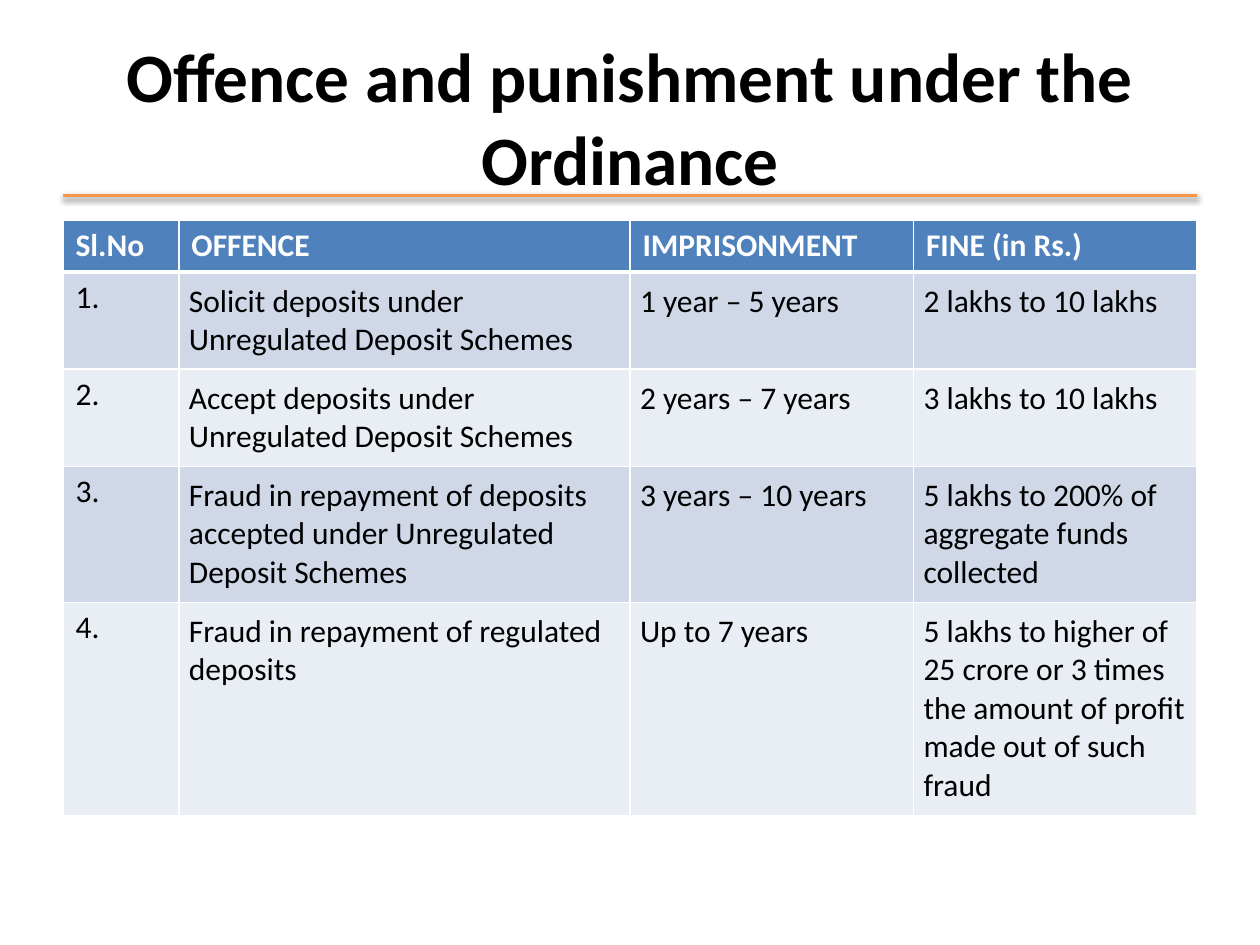
from lxml import etree
from pptx import Presentation
from pptx.dml.color import RGBColor
from pptx.enum import shapes, text
from pptx.oxml import parse_xml
from pptx.oxml.ns import nsdecls
from pptx.util import Inches, Pt

FONT = "Calibri"
LEFT, WIDTH = 0.5, 9
COLUMN_WIDTHS = [0.92, 3.58, 2.25, 2.25]
ROW_HEIGHTS = [0.41, 0.77, 0.77, 1.08, 1.69]
HEADER_FILL = "4F81BD"
BAND_FILLS = ["E9EDF4", "D0D8E8"]
HEADINGS = ["Sl.No", "OFFENCE", "IMPRISONMENT", "FINE (in Rs.)"]
OFFENCES = [
    ("Solicit deposits under Unregulated Deposit Schemes",
     "1 year – 5 years", "2 lakhs to 10 lakhs"),
    ("Accept deposits under Unregulated Deposit Schemes",
     "2 years – 7 years", "3 lakhs to 10 lakhs"),
    ("Fraud in repayment of deposits accepted under Unregulated Deposit Schemes",
     "3 years – 10 years", "5 lakhs to 200% of aggregate funds collected"),
    ("Fraud in repayment of regulated deposits", "Up to 7 years",
     "5 lakhs to higher of 25 crore or 3 times the amount of profit "
     "made out of such fraud"),
]


def color(value):
    """Turn a hex string into a colour."""
    return RGBColor.from_string(value)


def write_text(frame, content, size=18, fill="000000", bold=False, align=None):
    """Put one formatted paragraph into a text frame."""
    paragraph = frame.paragraphs[0]
    paragraph.alignment = align
    run = paragraph.add_run()
    run.text = content
    run.font.name = FONT
    run.font.size = Pt(size)
    run.font.bold = bold
    run.font.color.rgb = color(fill)


def add_title(slide, content):
    """Place and format the title placeholder."""
    title = slide.shapes.title
    title.left, title.top = Inches(LEFT), Inches(0.3)
    title.width, title.height = Inches(WIDTH), Inches(1.25)
    title.text_frame.word_wrap = True
    title.text_frame.vertical_anchor = text.MSO_ANCHOR.MIDDLE
    write_text(title.text_frame, content, size=39.6, bold=True,
               align=text.PP_ALIGN.CENTER)


def set_borders(cell, bottom=1, top=1):
    """Draw white borders, with widths in points, around a cell."""
    properties = cell._tc.get_or_add_tcPr()
    sides = {"lnL": 1, "lnR": 1, "lnT": top, "lnB": bottom}
    for index, (side, width) in enumerate(sides.items()):
        border = parse_xml(
            f'<a:{side} {nsdecls("a")} w="{Pt(width)}"><a:solidFill>'
            f'<a:srgbClr val="FFFFFF"/></a:solidFill></a:{side}>')
        properties.insert(index, border)


def fill_cell(cell, content, row, column):
    """Fill, border and write one table cell."""
    header = row == 0
    cell.fill.solid()
    cell.fill.fore_color.rgb = color(HEADER_FILL if header else BAND_FILLS[row % 2])
    set_borders(cell, bottom=3 if header else 1, top=3 if row == 1 else 1)
    if row and column:
        cell.margin_left = cell.margin_right = Inches(0.08)
        cell.margin_top = cell.margin_bottom = Inches(0.08)
    write_text(cell.text_frame, content, bold=header,
               fill="FFFFFF" if header else "000000")


def add_offence_table(slide):
    """Add the table of offences and punishments."""
    rows = [HEADINGS] + [(f"{number}.", *offence)
                         for number, offence in enumerate(OFFENCES, 1)]
    table = slide.shapes.add_table(
        len(rows), len(HEADINGS), Inches(LEFT), Inches(1.75),
        Inches(WIDTH), Inches(sum(ROW_HEIGHTS))).table
    for column, width in zip(table.columns, COLUMN_WIDTHS):
        column.width = Inches(width)
    for table_row, height in zip(table.rows, ROW_HEIGHTS):
        table_row.height = Inches(height)
    for row, contents in enumerate(rows):
        for column, content in enumerate(contents):
            fill_cell(table.cell(row, column), content, row, column)


def add_rule(slide, y):
    """Add the orange rule with a soft shadow below the title."""
    rule = slide.shapes.add_connector(
        shapes.MSO_CONNECTOR.STRAIGHT, Inches(LEFT), Inches(y),
        Inches(LEFT + WIDTH), Inches(y))
    rule.line.color.rgb = color("F79646")
    rule.line.width = Pt(2)
    rule._element.spPr.append(etree.fromstring(
        f'<a:effectLst {nsdecls("a")}><a:outerShdw blurRad="{Pt(3.1)}" '
        f'dist="{Pt(1.6)}" dir="5400000" rotWithShape="0"><a:srgbClr val="000000">'
        '<a:alpha val="38000"/></a:srgbClr></a:outerShdw></a:effectLst>'))


def main():
    """Build and save the slide."""
    presentation = Presentation()
    presentation.slide_width = Inches(10)
    presentation.slide_height = Inches(7.5)
    slide = presentation.slides.add_slide(presentation.slide_layouts[5])
    add_title(slide, "Offence and punishment under the Ordinance")
    add_offence_table(slide)
    add_rule(slide, 1.55)
    presentation.save("out.pptx")


if __name__ == "__main__":
    main()
